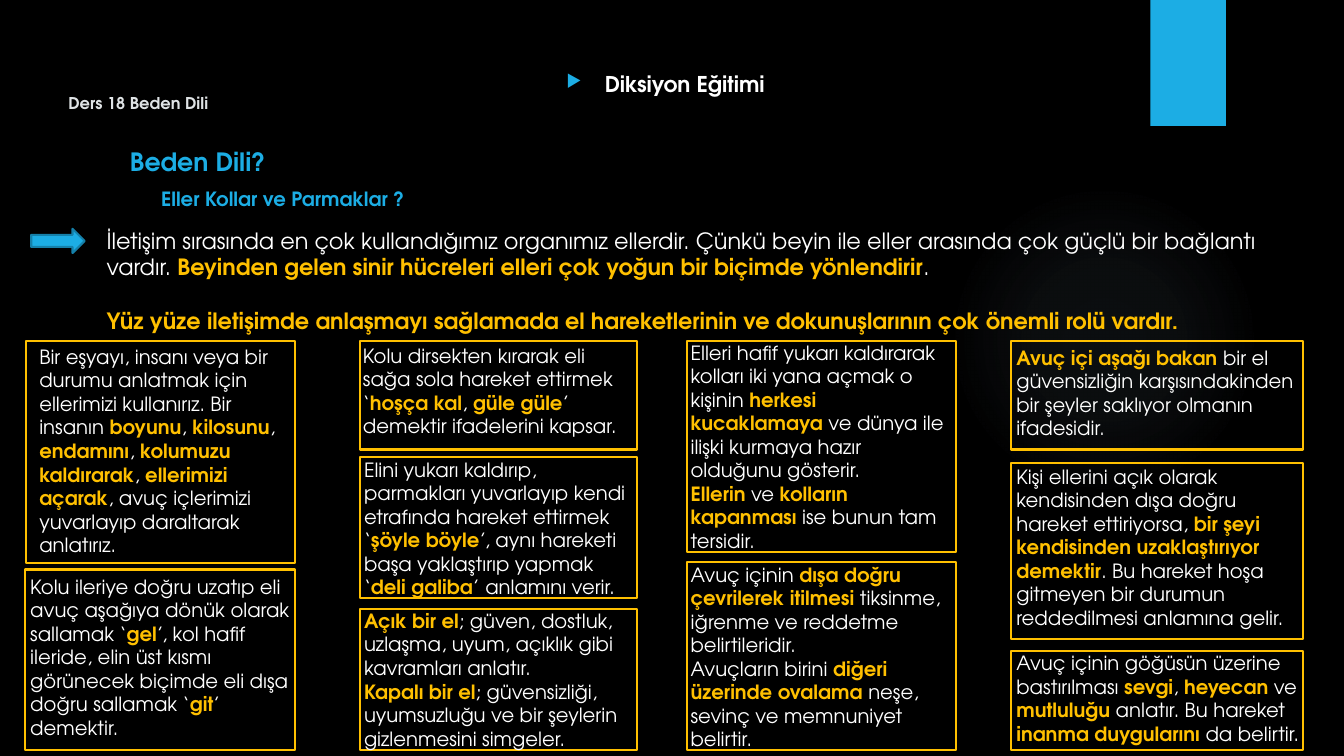
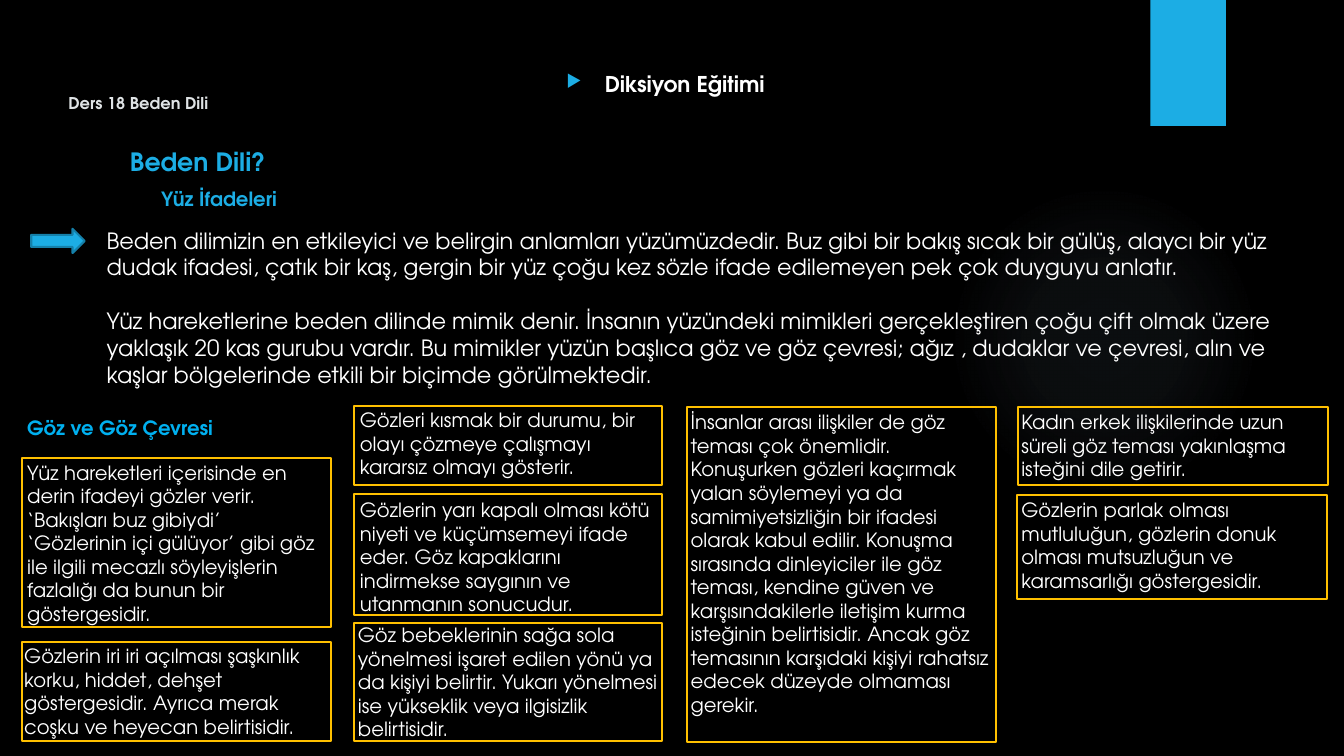
from lxml.etree import SubElement
from pptx import Presentation
from pptx.dml.color import RGBColor
from pptx.enum.shapes import MSO_SHAPE
from pptx.enum.text import MSO_ANCHOR, PP_ALIGN
from pptx.oxml import parse_xml
from pptx.oxml.ns import nsdecls, qn
from pptx.util import Emu, Pt

PX = 9144
BLACK = RGBColor(0x00, 0x00, 0x00)
WHITE = RGBColor(0xFF, 0xFF, 0xFF)
SILVER = RGBColor(0xDF, 0xE3, 0xE5)
BLUE = RGBColor(0x1C, 0xAD, 0xE4)
DARK_BLUE = RGBColor(0x15, 0x80, 0xA9)
SKY = RGBColor(0x00, 0xB0, 0xF0)
GOLD = RGBColor(0xFF, 0xC0, 0x00)
GLOW = RGBColor(0xA0, 0xC1, 0xD5)
GLOW_STOPS = ((0, 7), (36, 6), (69, 0))
FONT = "TeX Gyre Adventor"

STYLES = {
    "lesson": (SILVER, {"size": Pt(11.6), "bold": True}),
    "course": (WHITE, {"size": Pt(15.5), "bold": True}),
    "title": (BLUE, {"size": Pt(18), "bold": True}),
    "subtitle": (BLUE, {"size": Pt(14), "bold": True}),
    "section": (SKY, {"size": Pt(14), "bold": True}),
    "intro": (WHITE, {"size": Pt(16), "bold": False}),
    "card": (WHITE, {"size": Pt(14), "bold": False}),
}


def px(*lengths):
    return [Emu(n * PX) for n in lengths]


class Deck:
    def __init__(self):
        self.prs = Presentation()
        self.prs.slide_width, self.prs.slide_height = px(1333, 750)
        fill = self.prs.slide_master.background.fill
        fill.solid()
        fill.fore_color.rgb = BLACK
        self.s = None

    def slide(self, subtitle, *intro):
        self.s = self.prs.slides.add_slide(self.prs.slide_layouts[6])
        self.glow(941, 183, 308, 308)
        self.shape(MSO_SHAPE.RECTANGLE, (1141, 0, 75, 125), fill=BLUE)
        self.text((58, 89, 386, 27), "lesson", "Ders 18 Beden Dili", anchor=MSO_ANCHOR.MIDDLE)
        self.bullet(self.text((552, 65, 229, 40), "course", "Diksiyon Eğitimi"))
        self.text((119, 140, 156, 40), "title", "Beden Dili?", wrap=False)
        self.text((150, 181, 266, 34), "subtitle", subtitle, wrap=False)
        self.shape(MSO_SHAPE.RIGHT_ARROW, (31, 227, 53, 24), fill=BLUE, line=DARK_BLUE)
        self.text((96, 220, 1194, 199), "intro", *intro, gap=19.2)

    def shape(self, kind, box, fill=None, line=None):
        sp = self.s.shapes.add_shape(kind, *px(*box))
        sp.shadow.inherit = False
        if fill is None:
            sp.fill.background()
        else:
            sp.fill.solid()
            sp.fill.fore_color.rgb = fill
        if line is None:
            sp.line.fill.background()
        else:
            sp.line.color.rgb = line
            sp.line.width = Pt(1.5)
        return sp

    def glow(self, *box):
        sp = self.shape(MSO_SHAPE.OVAL, box)
        stops = "".join(
            f'<a:gs pos="{pos * 1000}"><a:srgbClr val="{GLOW}">'
            f'<a:alpha val="{alpha * 1000}"/></a:srgbClr></a:gs>'
            for pos, alpha in GLOW_STOPS
        )
        grad = parse_xml(
            f'<a:gradFill {nsdecls("a")}><a:gsLst>{stops}</a:gsLst><a:path path="circle">'
            '<a:fillToRect l="50000" t="50000" r="50000" b="50000"/></a:path></a:gradFill>'
        )
        sp_pr = sp.element.spPr
        sp_pr.replace(sp_pr.find(qn("a:noFill")), grad)

    def text(self, box, style, *paragraphs, insets=(10, 5, 10, 5), **layout):
        sp = self.s.shapes.add_textbox(*px(*box))
        self.fill_frame(sp.text_frame, style, paragraphs, insets, **layout)
        return sp

    def card(self, box, *paragraphs, left=4, top=0, right=0):
        sp = self.shape(MSO_SHAPE.RECTANGLE, box, line=GOLD)
        self.fill_frame(sp.text_frame, "card", paragraphs, (left, top, right, 0))

    def fill_frame(self, tf, style, paragraphs, insets, wrap=True, anchor=MSO_ANCHOR.TOP, gap=0):
        left, top, right, bottom = px(*insets)
        frame = {
            "margin_left": left, "margin_top": top,
            "margin_right": right, "margin_bottom": bottom,
            "word_wrap": wrap, "vertical_anchor": anchor,
        }
        for name, value in frame.items():
            setattr(tf, name, value)
        for i, text in enumerate(paragraphs):
            p = tf.add_paragraph() if i else tf.paragraphs[0]
            p.alignment = PP_ALIGN.LEFT
            if i and gap:
                p.space_before = Pt(gap)
            self.runs(p, text, *STYLES[style])

    def runs(self, p, text, color, font):
        for i, part in enumerate(text.split("*")):
            if not part:
                continue
            r = p.add_run()
            r.text = part
            strong = i % 2 == 1
            values = {"name": FONT, **font}
            if strong:
                values["bold"] = True
            for name, value in values.items():
                setattr(r.font, name, value)
            r.font.color.rgb = GOLD if strong else color

    def bullet(self, sp):
        p_pr = sp.text_frame.paragraphs[0]._p.get_or_add_pPr()
        indent = 38 * PX
        p_pr.set("marL", str(indent))
        p_pr.set("indent", str(-indent))
        SubElement(SubElement(p_pr, qn("a:buClr")), qn("a:srgbClr")).set("val", str(BLUE))
        SubElement(p_pr, qn("a:buSzPct")).set("val", "80000")
        SubElement(p_pr, qn("a:buChar")).set("char", "▶")


def hands(deck):
    deck.slide(
        "Eller Kollar ve Parmaklar ?",
        "İletişim sırasında en çok kullandığımız organımız ellerdir. Çünkü beyin ile eller "
        "arasında çok güçlü bir bağlantı vardır. *Beyinden gelen sinir hücreleri elleri çok "
        "yoğun bir biçimde yönlendirir*.",
        "*Yüz yüze iletişimde anlaşmayı sağlamada el hareketlerinin ve dokunuşlarının çok "
        "önemli rolü vardır.*",
    )
    deck.card(
        (26, 338, 267, 221),
        "Bir eşyayı, insanı veya bir durumu anlatmak için ellerimizi kullanırız. Bir insanın "
        "*boyunu*, *kilosunu*, *endamını*, *kolumuzu kaldırarak*, *ellerimizi açarak*, avuç "
        "içlerimizi yuvarlayıp daraltarak anlatırız.",
        left=13, top=4, right=14,
    )
    deck.card(
        (25, 565, 268, 179),
        "Kolu ileriye doğru uzatıp eli avuç aşağıya dönük olarak sallamak ‘*gel*’, kol hafif "
        "ileride, elin üst kısmı görünecek biçimde eli dışa doğru sallamak ‘*git*’ demektir.",
        left=5, top=5,
    )
    deck.card(
        (357, 338, 275, 108),
        "Kolu dirsekten kırarak eli sağa sola hareket ettirmek ‘*hoşça kal*, *güle güle*’ "
        "demektir ifadelerini kapsar.",
        left=3, top=3, right=7,
    )
    deck.card(
        (357, 453, 275, 140),
        "Elini yukarı kaldırıp, parmakları yuvarlayıp kendi etrafında hareket ettirmek "
        "‘*şöyle böyle*’, aynı hareketi başa yaklaştırıp yapmak ‘*deli galiba*’ anlamını verir.",
        top=1, right=11,
    )
    deck.card(
        (357, 604, 275, 140),
        "*Açık bir el*; güven, dostluk, uzlaşma, uyum, açıklık gibi kavramları anlatır.",
        "*Kapalı bir el*; güvensizliği, uyumsuzluğu ve bir şeylerin gizlenmesini simgeler.",
    )
    deck.card(
        (681, 338, 267, 210),
        "Elleri hafif yukarı kaldırarak kolları iki yana açmak o kişinin *herkesi kucaklamaya "
        "*ve dünya ile ilişki kurmaya hazır olduğunu gösterir.",
        "*Ellerin* ve *kolların kapanması *ise bunun tam tersidir.",
        right=7,
    )
    deck.card(
        (681, 558, 267, 186),
        "Avuç içinin *dışa doğru çevrilerek itilmesi *tiksinme, iğrenme ve reddetme "
        "belirtileridir.",
        "Avuçların birini *diğeri üzerinde ovalama *neşe, sevinç ve memnuniyet belirtir.",
    )
    deck.card(
        (1003, 338, 289, 108),
        "*Avuç içi aşağı bakan *bir el güvensizliğin karşısındakinden bir şeyler saklıyor "
        "olmanın ifadesidir.",
        left=5, top=5,
    )
    deck.card(
        (1003, 459, 289, 175),
        "Kişi ellerini açık olarak kendisinden dışa doğru hareket ettiriyorsa, *bir şeyi "
        "kendisinden uzaklaştırıyor demektir*. Bu hareket hoşa gitmeyen bir durumun "
        "reddedilmesi anlamına gelir.",
        left=5, top=2,
    )
    deck.card(
        (1003, 646, 289, 98),
        "Avuç içinin göğüsün üzerine bastırılması *sevgi*, *heyecan* ve *mutluluğu* anlatır. "
        "Bu hareket *inanma duygularını *da belirtir.",
        left=5,
    )


def face(deck):
    deck.slide(
        "Yüz İfadeleri",
        "Beden dilimizin en etkileyici ve belirgin anlamları yüzümüzdedir. Buz gibi bir bakış "
        "sıcak bir gülüş, alaycı bir yüz dudak ifadesi, çatık bir kaş, gergin bir yüz çoğu kez "
        "sözle ifade edilemeyen pek çok duyguyu anlatır.",
        "Yüz hareketlerine beden dilinde mimik denir. İnsanın yüzündeki mimikleri "
        "gerçekleştiren çoğu çift olmak üzere yaklaşık 20 kas gurubu vardır. Bu mimikler yüzün "
        "başlıca göz ve göz çevresi; ağız , dudaklar ve çevresi, alın ve kaşlar bölgelerinde "
        "etkili bir biçimde görülmektedir.",
    )
    deck.text((17, 408, 316, 34), "section", "Göz ve Göz Çevresi")
    deck.card(
        (22, 454, 306, 168),
        "Yüz hareketleri içerisinde en derin ifadeyi gözler verir. ‘Bakışları buz gibiydi’ "
        "‘Gözlerinin içi gülüyor’ gibi göz ile ilgili mecazlı söyleyişlerin fazlalığı da bunun "
        "bir göstergesidir.",
        left=5, top=3, right=9,
    )
    deck.card(
        (22, 637, 306, 98),
        "Gözlerin iri iri açılması şaşkınlık korku, hiddet, dehşet göstergesidir. Ayrıca merak "
        "coşku ve heyecan belirtisidir.",
        left=2, top=2, right=18,
    )
    deck.card(
        (351, 403, 306, 78),
        "Gözleri kısmak bir durumu, bir olayı çözmeye çalışmayı kararsız olmayı gösterir.",
        left=6, top=2, right=4,
    )
    deck.card(
        (351, 490, 306, 120),
        "Gözlerin yarı kapalı olması kötü niyeti ve küçümsemeyi ifade eder. Göz kapaklarını "
        "indirmekse saygının ve utanmanın sonucudur.",
        left=6, top=4, right=10,
    )
    deck.card(
        (351, 618, 306, 117),
        "Göz bebeklerinin sağa sola yönelmesi işaret edilen yönü ya da kişiyi belirtir. Yukarı "
        "yönelmesi ise yükseklik veya ilgisizlik belirtisidir.",
        right=4,
    )
    deck.card(
        (681, 404, 307, 332),
        "İnsanlar arası ilişkiler de göz teması çok önemlidir. Konuşurken gözleri kaçırmak "
        "yalan söylemeyi ya da samimiyetsizliğin bir ifadesi olarak kabul edilir. Konuşma "
        "sırasında dinleyiciler ile göz teması, kendine güven ve karşısındakilerle iletişim "
        "kurma isteğinin belirtisidir. Ancak göz temasının karşıdaki kişiyi rahatsız edecek "
        "düzeyde olmaması gerekir.",
        top=3,
    )
    deck.card(
        (1010, 404, 307, 77),
        "Kadın erkek ilişkilerinde uzun süreli göz teması yakınlaşma isteğini dile getirir.",
        left=3, top=3,
    )
    deck.card(
        (1009, 491, 307, 103),
        "Gözlerin parlak olması mutluluğun, gözlerin donuk olması mutsuzluğun ve karamsarlığı "
        "göstergesidir.",
        top=3, right=10,
    )


def main():
    deck = Deck()
    hands(deck)
    face(deck)
    deck.prs.save("out.pptx")


if __name__ == "__main__":
    main()
